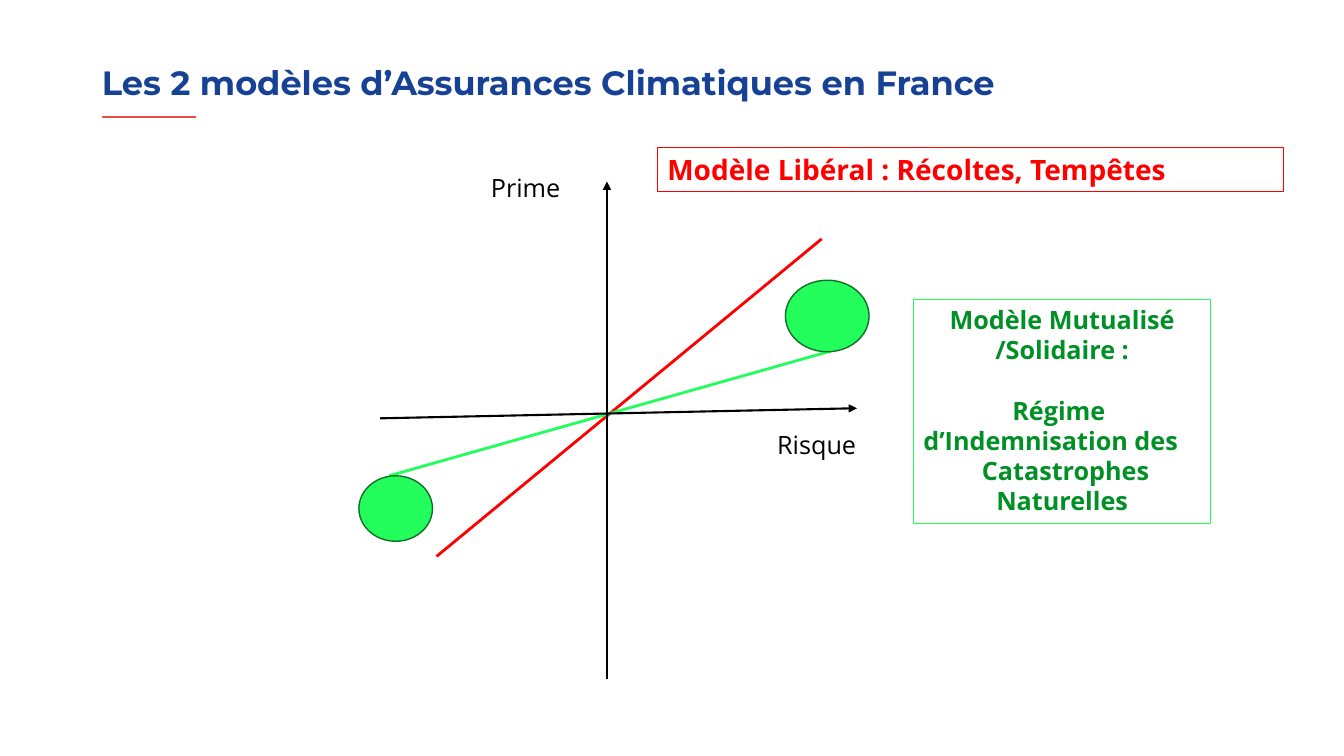
from dataclasses import dataclass

from lxml import etree
from pptx import Presentation
from pptx import util as u
from pptx.dml.color import RGBColor
from pptx.enum import shapes, text
from pptx.oxml.ns import qn


@dataclass(frozen=True)
class Theme:
    heading_font: str = "Montserrat"
    body_font: str = "Open Sans"
    navy: str = "164194"
    coral: str = "E25046"
    red: str = "FF0000"
    lime: str = "23FE5C"
    forest: str = "0F6F28"
    green: str = "019026"
    black: str = "000000"
    white: str = "FFFFFF"
    title_size: float = 24
    callout_size: float = 20
    body_size: float = 18
    line_pitch: float = 21.6


class Deck:
    """Places elements on a grid of 13.33 columns by 7.5 rows."""

    COLS, ROWS = 13.33, 7.5

    def __init__(self, theme):
        self.theme = theme
        self.prs = Presentation()
        self.prs.slide_width = u.Inches(13.33)
        self.prs.slide_height = u.Inches(7.5)
        self.s = self.prs.slides.add_slide(self.prs.slide_layouts[5])

    def x(self, cols):
        return round(self.prs.slide_width * cols / self.COLS)

    def y(self, rows):
        return round(self.prs.slide_height * rows / self.ROWS)

    def box(self, left, top, width, height):
        return self.x(left), self.y(top), self.x(width), self.y(height)

    def add_words(self, p, words, size, color, font=None, bold=False):
        r = p.add_run()
        r.text = words
        r.font.size = u.Pt(size)
        r.font.name = font or self.theme.body_font
        r.font.bold = bold
        r.font.color.rgb = RGBColor.from_string(color)

    def title(self, words, *place):
        sp = self.s.shapes.title
        sp.left, sp.top, sp.width, sp.height = self.box(*place)
        tf = sp.text_frame
        tf.auto_size = text.MSO_AUTO_SIZE.NONE
        tf.vertical_anchor = text.MSO_ANCHOR.MIDDLE
        tf.margin_left = 0
        p = tf.paragraphs[0]
        p.alignment = text.PP_ALIGN.LEFT
        p.line_spacing = 0.9
        self.add_words(p, words, self.theme.title_size, self.theme.navy,
                       self.theme.heading_font, True)

    def line(self, start, end, color, width, arrow=False):
        sp = self.s.shapes.add_connector(
            shapes.MSO_CONNECTOR.STRAIGHT,
            self.x(start[0]), self.y(start[1]), self.x(end[0]), self.y(end[1]))
        sp.line.color.rgb = RGBColor.from_string(color)
        sp.line.width = u.Pt(width)
        sp_pr = sp._element.spPr
        if arrow:
            etree.SubElement(sp_pr.find(qn("a:ln")), qn("a:tailEnd"), type="triangle")
        etree.SubElement(sp_pr, qn("a:effectLst"))

    def shape(self, kind, place, fill=None, line=None, width=0.75):
        sp = self.s.shapes.add_shape(kind, *self.box(*place))
        sp.shadow.inherit = False
        if fill:
            sp.fill.solid()
            sp.fill.fore_color.rgb = RGBColor.from_string(fill)
        else:
            sp.fill.background()
        if line:
            sp.line.color.rgb = RGBColor.from_string(line)
            sp.line.width = u.Pt(width)
        else:
            sp.line.fill.background()
        return sp

    def disc(self, *place):
        self.shape(shapes.MSO_SHAPE.OVAL, place, self.theme.lime, self.theme.forest, 1)

    def panel(self, rows, place, size, color, bold=False, fill=None, line=None):
        """Rows are (words, centred, indent in columns, space before in points)."""
        sp = self.shape(shapes.MSO_SHAPE.RECTANGLE, place, fill, line)
        tf = sp.text_frame
        tf.word_wrap = True
        tf.auto_size = text.MSO_AUTO_SIZE.SHAPE_TO_FIT_TEXT
        tf.vertical_anchor = text.MSO_ANCHOR.TOP
        for i, (words, centred, indent, before) in enumerate(rows):
            p = tf.add_paragraph() if i else tf.paragraphs[0]
            p.alignment = text.PP_ALIGN.CENTER if centred else text.PP_ALIGN.LEFT
            if indent:
                p._p.get_or_add_pPr().set("marL", str(self.x(indent)))
            if before:
                p.space_before = u.Pt(before)
            self.add_words(p, words, size, color, bold=bold)

    def label(self, words, place, fill=None):
        self.panel([(words, False, 0, 0)], place, self.theme.body_size,
                   self.theme.black, fill=fill)


def main():
    t = Theme()
    d = Deck(t)
    d.line((1.01, 1.16), (1.94, 1.16), t.coral, 1.5)
    d.title("Les 2 modèles d’Assurances Climatiques en France", 1.01, 0.6, 11.5, 0.48)
    d.panel([("Modèle Libéral : Récoltes, Tempêtes", False, 0, 0)],
            (6.52, 1.46, 6.21, 0.44), t.callout_size, t.red, bold=True, line=t.red)

    d.line((8.15, 2.37), (4.33, 5.52), t.red, 2)
    d.line((8.25, 3.48), (3.86, 4.72), t.lime, 2)
    d.label("Prime", (4.77, 1.66, 1.25, 0.4))
    d.label("Risque", (7.61, 4.21, 1.93, 0.4), t.white)
    d.line((6.02, 6.74), (6.02, 1.8), t.black, 1.5, arrow=True)
    d.line((3.77, 4.15), (8.5, 4.05), t.black, 1.5, arrow=True)
    d.disc(7.79, 2.78, 0.83, 0.71)
    d.disc(3.56, 4.72, 0.73, 0.65)

    d.panel([("Modèle Mutualisé", True, 0, 0),
             ("/Solidaire :", True, 0, 0),
             ("Régime ", True, 0, t.line_pitch),
             ("d’Indemnisation des", False, 0, 0),
             ("Catastrophes", False, 0.58, 0),
             ("Naturelles", True, 0, 0)],
            (9.06, 2.97, 2.95, 2.22), t.body_size, t.green, bold=True, line=t.lime)
    d.prs.save("out.pptx")


if __name__ == "__main__":
    main()
